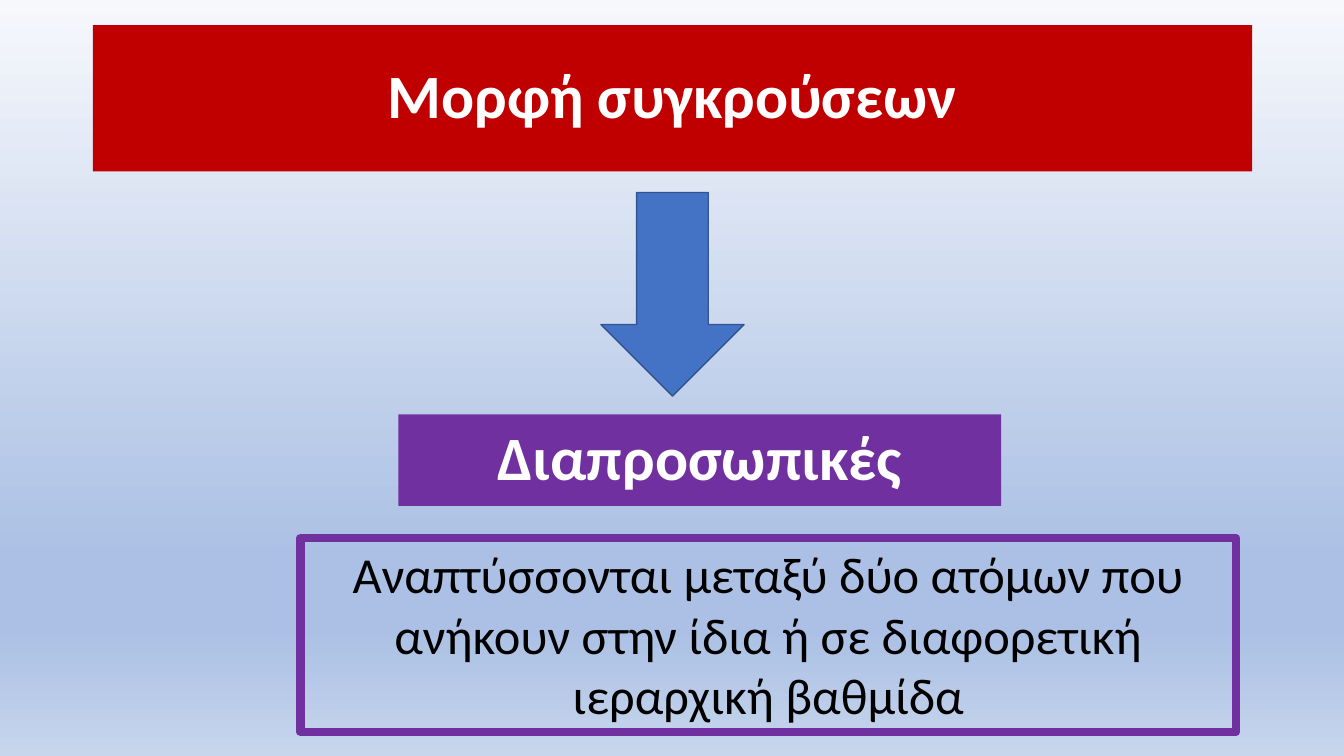
"""Build a slide on interpersonal conflicts."""
from lxml.etree import SubElement
from pptx import Presentation
from pptx.dml.color import RGBColor
from pptx.enum.shapes import MSO_SHAPE
from pptx.enum.text import MSO_ANCHOR, PP_ALIGN
from pptx.oxml.ns import qn
from pptx.util import Inches, Pt

TITLE = "Μορφή συγκρούσεων"
CONFLICT_TYPE = "Διαπροσωπικές"
DEFINITION = (
    "Αναπτύσσονται µεταξύ δύο ατόµων που ανήκουν στην ίδια "
    "ή σε διαφορετική ιεραρχική βαθµίδα"
)
FONT = "Calibri"
COLORS = {
    "red": "C00000",
    "purple": "7030A0",
    "blue": "4472C4",
    "outline": "325491",
    "white": "FFFFFF",
    "black": "000000",
}
BACKGROUND_STOPS = [(0, "F6F8FC"), (74, "ABC0E4"), (83, "ABC0E4"), (100, "C7D5ED")]
BOXES = {
    "title": (0.92, 0.25, 11.5, 1.45),
    "arrow": (5.96, 1.91, 1.42, 2.02),
    "type": (3.95, 4.11, 5.98, 0.91),
    "definition": (2.98, 5.34, 9.28, 1.92),
}


def color(name):
    return RGBColor.from_string(COLORS[name])


def box(name):
    return [Inches(length) for length in BOXES[name]]


def paint(shape, fill):
    shape.fill.solid()
    shape.fill.fore_color.rgb = color(fill)


def write(shape, text, size, text_color, bold=False, spacing=1.0, anchor=MSO_ANCHOR.MIDDLE):
    frame = shape.text_frame
    frame.text = text
    frame.word_wrap = True
    frame.vertical_anchor = anchor
    paragraph = frame.paragraphs[0]
    paragraph.alignment = PP_ALIGN.CENTER
    paragraph.line_spacing = spacing
    font = paragraph.runs[0].font
    font.name = FONT
    font.size = Pt(size)
    font.bold = bold
    font.color.rgb = color(text_color)


def paint_background(slide):
    fill = slide.background.fill
    fill.gradient()
    fill.gradient_angle = 270
    stops = slide.element.find(".//" + qn("a:gsLst"))
    for stop in list(stops):
        stops.remove(stop)
    for percent, value in BACKGROUND_STOPS:
        stop = SubElement(stops, qn("a:gs"), pos=str(percent * 1000))
        SubElement(stop, qn("a:srgbClr"), val=value)


def main():
    presentation = Presentation()
    presentation.slide_width = Inches(13.33)
    presentation.slide_height = Inches(7.5)
    slide = presentation.slides.add_slide(presentation.slide_layouts[5])
    paint_background(slide)

    title = slide.shapes.title
    title.left, title.top, title.width, title.height = box("title")
    paint(title, "red")
    write(title, TITLE, 44, "white", bold=True, spacing=0.9)

    arrow = slide.shapes.add_shape(MSO_SHAPE.DOWN_ARROW, *box("arrow"))
    arrow.shadow.inherit = False
    paint(arrow, "blue")
    arrow.line.color.rgb = color("outline")
    arrow.line.width = Pt(1)

    conflict_type = slide.shapes.add_textbox(*box("type"))
    paint(conflict_type, "purple")
    write(conflict_type, CONFLICT_TYPE, 44, "white", bold=True, spacing=0.9)

    definition = slide.shapes.add_textbox(*box("definition"))
    definition.line.color.rgb = color("purple")
    definition.line.width = Pt(6)
    write(definition, DEFINITION, 36, "black", anchor=MSO_ANCHOR.TOP)

    presentation.save("out.pptx")


if __name__ == "__main__":
    main()
